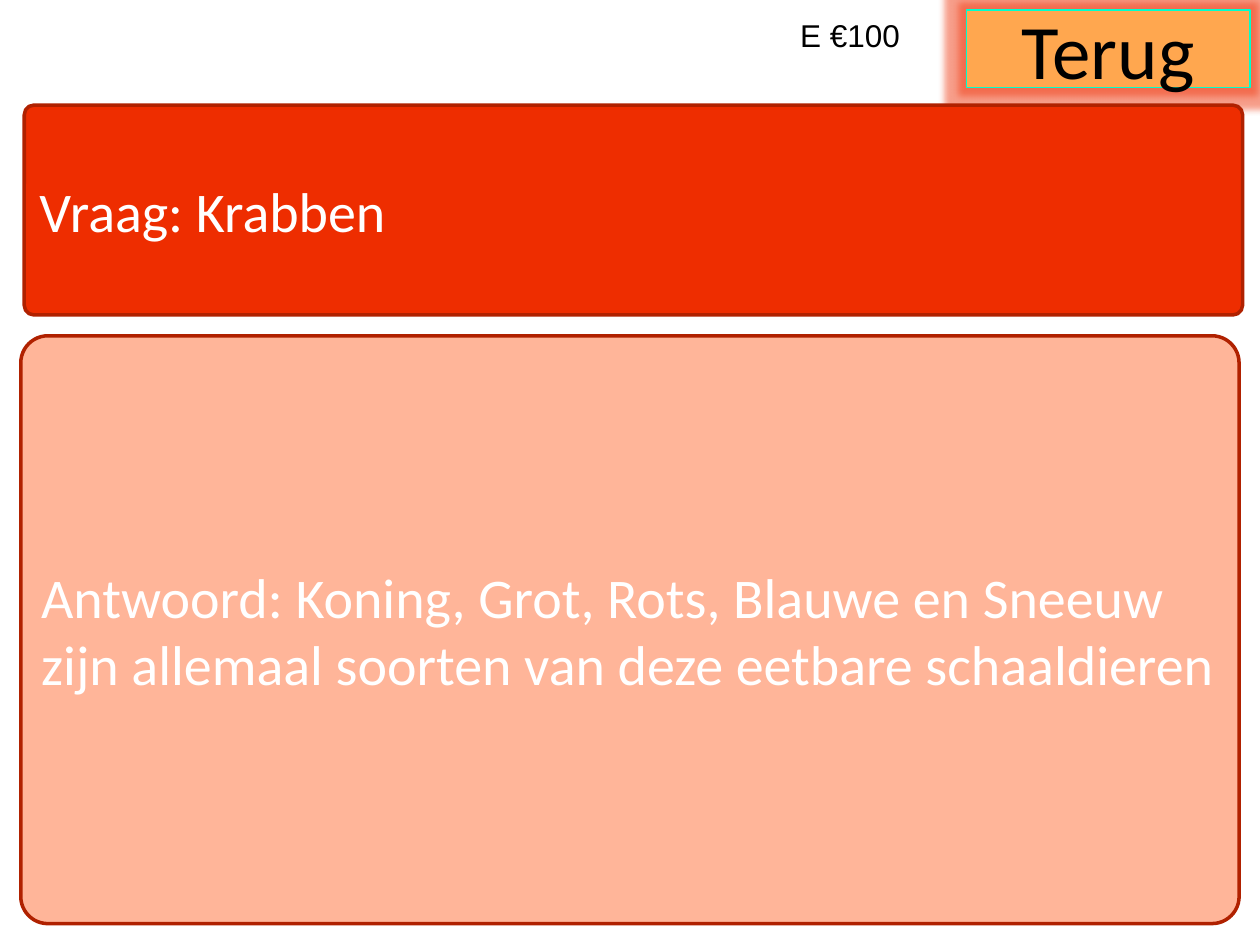
from lxml.etree import SubElement
from pptx import Presentation
from pptx.dml.color import RGBColor
from pptx.enum.shapes import MSO_SHAPE
from pptx.enum.text import MSO_ANCHOR, PP_ALIGN
from pptx.oxml.ns import qn
from pptx.util import Cm, Pt

COLORS = {
    "black": "000000", "white": "FFFFFF",
    "orange": "FFA74F", "aqua": "00FFCC", "glow": "F03C14",
    "red": "EE2D00", "peach": "FFB599", "edge": "B02100",
}


def color(name):
    return RGBColor.from_string(COLORS[name])


def write(shape, text, size, ink, font="Calibri", align=PP_ALIGN.LEFT,
          anchor=MSO_ANCHOR.MIDDLE):
    frame = shape.text_frame
    frame.text = text
    frame.word_wrap = True
    frame.vertical_anchor = anchor
    para = frame.paragraphs[0]
    para.alignment = align
    style = para.runs[0].font
    style.name, style.size = font, Pt(size)
    style.color.rgb = color(ink)


def add_box(slide, kind, place, fill, edge, width):
    box = slide.shapes.add_shape(kind, *map(Cm, place))
    box.shadow.inherit = False
    box.fill.solid()
    box.fill.fore_color.rgb = color(fill)
    box.line.color.rgb = color(edge)
    box.line.width = Pt(width)
    return box


def add_glow(box, name, size, alpha):
    effects = box._element.spPr.find(qn("a:effectLst"))
    glow = SubElement(effects, qn("a:glow"), rad=str(Pt(size)))
    tint = SubElement(glow, qn("a:srgbClr"), val=COLORS[name])
    SubElement(tint, qn("a:alpha"), val=str(alpha * 1000))


def add_button(slide, text):
    box = add_box(slide, MSO_SHAPE.RECTANGLE, (19.48, 0.2, 5.72, 1.57),
                  "orange", "aqua", 0.75)
    add_glow(box, "glow", 8, 50)
    write(box, text, 44, "black", align=PP_ALIGN.CENTER)


def add_label(slide, text):
    box = slide.shapes.add_textbox(Cm(15.88), Cm(0.2), Cm(3.6), Cm(1.63))
    write(box, text, 18, "black", font="Arial", anchor=MSO_ANCHOR.TOP)


def add_panel(slide, text, place, fill):
    box = add_box(slide, MSO_SHAPE.ROUNDED_RECTANGLE, place, fill, "edge", 2)
    box.adjustments[0] = 0.046
    write(box, text, 32, "white")


def main():
    deck = Presentation()
    deck.slide_width, deck.slide_height = Cm(25.4), Cm(19.05)
    slide = deck.slides.add_slide(deck.slide_layouts[6])

    # Top row: back button and price
    add_button(slide, "Terug")
    add_label(slide, "E €100")

    # Answer and question panels
    add_panel(slide, "Antwoord: Koning, Grot, Rots, Blauwe en Sneeuw zijn "
              "allemaal soorten van deze eetbare schaaldieren",
              (0.42, 6.77, 24.56, 11.85), "peach")
    add_panel(slide, "Vraag: Krabben", (0.49, 2.12, 24.56, 4.23), "red")

    deck.save("out.pptx")


if __name__ == "__main__":
    main()
